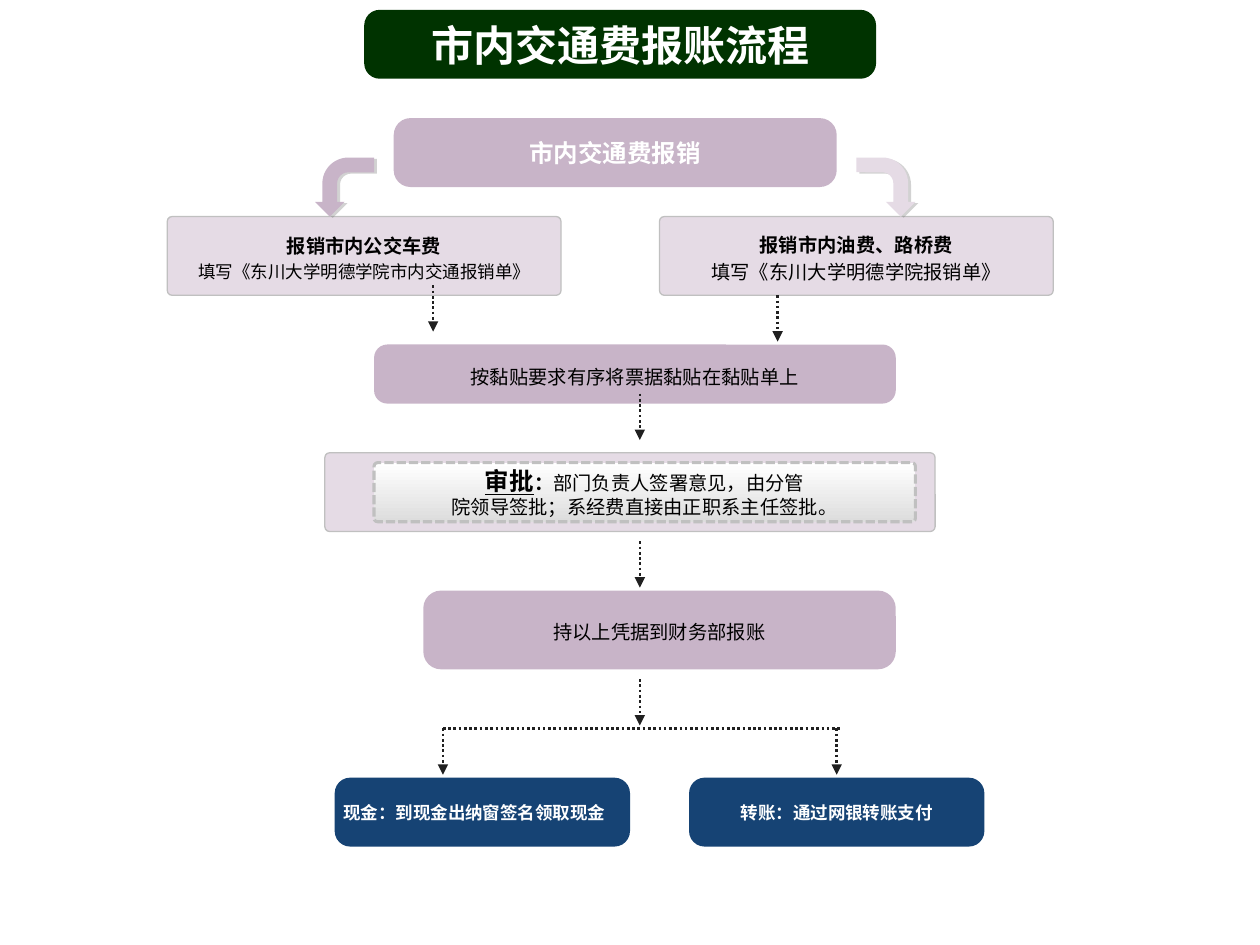
from lxml.etree import SubElement
from pptx import Presentation
from pptx.dml.color import RGBColor
from pptx.enum.dml import MSO_LINE
from pptx.enum.shapes import MSO_CONNECTOR, MSO_SHAPE
from pptx.enum.text import MSO_ANCHOR, PP_ALIGN
from pptx.oxml.ns import qn
from pptx.util import Inches, Pt

FONT = "Noto Sans CJK SC"
WHITE, BLACK, GREY = "FFFFFF", "000000", "C0C0C0"
GREEN, MAUVE, PALE, NAVY = "003300", "C8B4C8", "E5DBE5", "164374"
COLUMNS, ROWS = 128, 96


def color(value):
    return RGBColor.from_string(value)


class FlowSlide:
    """Draws flow chart parts on a grid of 128 columns by 96 rows."""

    def __init__(self, presentation):
        self.slide = presentation.slides.add_slide(presentation.slide_layouts[6])
        self.column = presentation.slide_width / COLUMNS
        self.row = presentation.slide_height / ROWS

    def place(self, left, top, width, height):
        return (round(left * self.column), round(top * self.row),
                round(width * self.column), round(height * self.row))

    def box(self, area, fill, rounding=0.225, border=None, width=0.75):
        shape = self.slide.shapes.add_shape(
            MSO_SHAPE.ROUNDED_RECTANGLE, *self.place(*area))
        shape.adjustments[0] = rounding
        shape.shadow.inherit = False
        shape.fill.solid()
        shape.fill.fore_color.rgb = color(fill)
        if border:
            shape.line.color.rgb = color(border)
            shape.line.width = Pt(width)
        else:
            shape.line.fill.background()
        return shape

    def dashed_panel(self, area):
        shape = self.box(area, WHITE, 0.062, GREY, 1.75)
        shape.line.dash_style = MSO_LINE.SQUARE_DOT
        shape.fill.gradient()
        shape.fill.gradient_angle = 270
        for stop, shade, position in zip(shape.fill.gradient_stops, (WHITE, "DDDDDD"), (0, 1)):
            stop.color.rgb = color(shade)
            stop.position = position
        return shape

    def label(self, shape, lines, ink=BLACK, spacing=None, shift=0):
        """Each line is a list of runs: (text, size, bold, underline)."""
        frame = shape.text_frame
        frame.word_wrap = True
        frame.vertical_anchor = MSO_ANCHOR.MIDDLE
        frame.margin_left = frame.margin_top = frame.margin_bottom = 0
        frame.margin_right = Inches(shift)
        for index, line in enumerate(lines):
            paragraph = frame.add_paragraph() if index else frame.paragraphs[0]
            paragraph.alignment = PP_ALIGN.CENTER
            if spacing:
                paragraph.line_spacing = spacing
            for text, size, bold, underline in line:
                run = paragraph.add_run()
                run.text = text
                font = run.font
                font.name, font.size = FONT, Pt(size)
                font.bold, font.underline = bold, underline
                font.color.rgb = color(ink)
                SubElement(run._r.get_or_add_rPr(), qn("a:ea"), typeface=FONT)

    def dotted_line(self, start, end, arrow=True):
        x1, y1, x2, y2 = self.place(*start, *end)
        connector = self.slide.shapes.add_connector(
            MSO_CONNECTOR.STRAIGHT, x1, y1, x2, y2)
        connector.line.color.rgb = color("202020")
        connector.line.width = Pt(1.5)
        connector.line.dash_style = MSO_LINE.ROUND_DOT
        if arrow:
            outline = connector._element.spPr.find(qn("a:ln"))
            SubElement(outline, qn("a:tailEnd"), type="triangle")
        SubElement(connector._element.spPr, qn("a:effectLst"))

    def down_arrow(self, column, top, length=4.7):
        self.dotted_line((column, top), (column, top + length))

    def bent_arrow(self, left, fill, mirrored=False):
        shape = self.slide.shapes.add_shape(
            MSO_SHAPE.BENT_ARROW, *self.place(left, 16, 6, 6))
        shape.rotation = 90
        if mirrored:
            shape._element.spPr.xfrm.set("flipV", "1")
        shape.fill.solid()
        shape.fill.fore_color.rgb = color(fill)
        shape.line.fill.background()
        # Soft grey shadow to the lower right
        shape.shadow.inherit = False
        effects = shape._element.spPr.find(qn("a:effectLst"))
        shadow = SubElement(effects, qn("a:outerShdw"), dist=str(Pt(1.8)),
                            dir=str(24 * 60000), rotWithShape="0")
        shade = SubElement(shadow, qn("a:srgbClr"), val="808080")
        SubElement(shade, qn("a:alpha"), val="35000")


def main():
    presentation = Presentation()
    presentation.slide_width, presentation.slide_height = Inches(10), Inches(7.5)
    flow = FlowSlide(presentation)

    # Single-line steps: area, fill, rounding, text, size, bold, ink, shift
    steps = [
        ((37, 1, 52, 7), GREEN, 0.225, "市内交通费报账流程", 24, True, WHITE, 0),
        ((40, 12, 45, 7), MAUVE, 0.244, "市内交通费报销", 14, True, WHITE, 0),
        ((38, 35, 53, 6), MAUVE, 0.225, "按黏贴要求有序将票据黏贴在黏贴单上", 11, False, BLACK, 0),
        ((43, 60, 48, 8), MAUVE, 0.225, "持以上凭据到财务部报账", 11, False, BLACK, 0),
        ((34, 79, 30, 7), NAVY, 0.225, "现金：到现金出纳窗签名领取现金", 10, True, WHITE, 0.13),
        ((70, 79, 30, 7), NAVY, 0.225, "转账：通过网银转账支付", 10, True, WHITE, 0),
    ]
    for area, fill, rounding, text, size, bold, ink, shift in steps:
        flow.label(flow.box(area, fill, rounding), [[(text, size, bold, False)]],
                   ink, 1.2 if ink == BLACK else None, shift)

    # Two kinds of claim
    claims = [
        (17, "报销市内公交车费", "填写《东川大学明德学院市内交通报销单》", 10),
        (67, "报销市内油费、路桥费", "填写《东川大学明德学院报销单》", 11),
    ]
    for left, heading, form, size in claims:
        claim = flow.box((left, 22, 40, 8), PALE, 0.062, GREY)
        flow.label(claim, [[(heading, 11, True, False)], [(form, size, False, False)]],
                   spacing=1.2)
    flow.bent_arrow(32, MAUVE, mirrored=True)
    flow.bent_arrow(87, PALE)

    # Approval
    flow.box((33, 46, 62, 8), PALE, 0.062, GREY)
    flow.label(flow.dashed_panel((38, 47, 55, 6)), [
        [("审批", 14, True, True), ("：", 11, True, False),
         ("部门负责人签署意见，由分管", 11, False, False)],
        [("院领导签批；系经费直接由正职系主任签批。", 11, False, False)],
    ])

    # Arrows between the steps, and the fork to the two payments
    for column, top in [(44, 29), (79, 30), (65, 40), (65, 55), (65, 69), (45, 74), (85, 74)]:
        flow.down_arrow(column, top)
    flow.dotted_line((45, 74), (85.4, 74), arrow=False)

    presentation.save("out.pptx")


if __name__ == "__main__":
    main()
